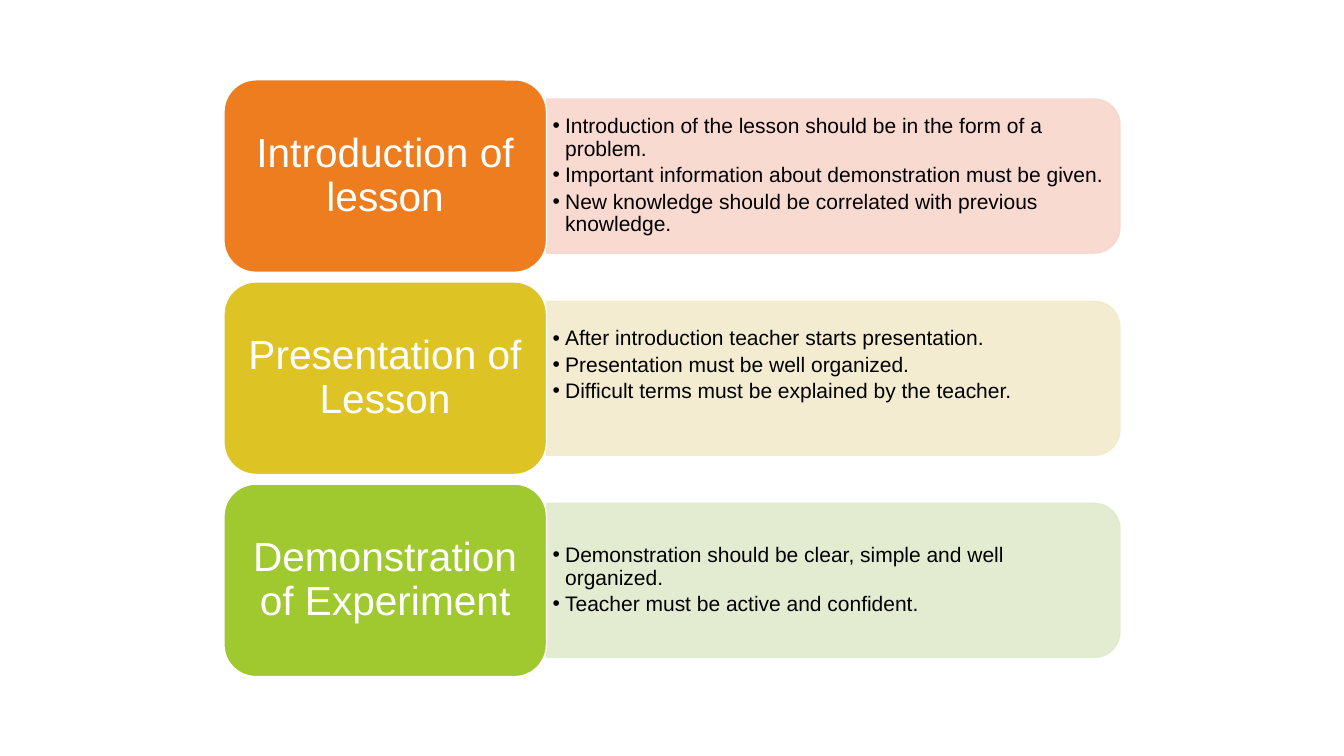
"""Build a slide of three lesson stages, each a title card with a bulleted panel."""
from lxml.etree import SubElement
from pptx import Presentation
from pptx.dml.color import RGBColor
from pptx.enum.shapes import MSO_SHAPE as SHAPE
from pptx.enum.text import MSO_ANCHOR as ANCHOR, PP_ALIGN as ALIGN
from pptx.oxml.ns import qn
from pptx.util import Pt


def paint(color_format, hex_color, alpha=100):
    color_format.rgb = RGBColor.from_string(hex_color)
    if alpha < 100:
        for clr in color_format._xFill.iter(qn("a:srgbClr")):
            SubElement(clr, qn("a:alpha"), val=str(alpha * 1000))


def add_text(p, text, size, hex_color, space_after):
    p.line_spacing = 0.9
    p.space_after = Pt(space_after)
    r = p.add_run()
    r.text = text
    r.font.size = Pt(size)
    r.font.name = "Arial"
    paint(r.font.color, hex_color)


STAGES = [
    ("Introduction of lesson", "ED7D1F", "F8D7CD", 2.2, [
        "Introduction of the lesson should be in the form of a problem.",
        "Important information about demonstration must be given.",
        "New knowledge should be correlated with previous knowledge."]),
    ("Presentation of Lesson", "DEC324", "F2EBCD", 20.4, [
        "After introduction teacher starts presentation.",
        "Presentation must be well organized.",
        "Difficult terms must be explained by the teacher."]),
    ("Demonstration of Experiment", "A0C82F", "E0EBCD", 2.2, [
        "Demonstration should be clear, simple and well organized.",
        "Teacher must be active and confident."]),
]
LEFT, TOP, PITCH = 160, 57, 144.4
CARD_W, CARD_H = 230.4, 137.5
PANEL_W, PANEL_H = 409.6, 110
TEXT_W, TEXT_H = 404, 99.4
PANEL_LEFT = LEFT + CARD_W

prs = Presentation()
prs.slide_width, prs.slide_height = Pt(960), Pt(540)
s = prs.slides.add_slide(prs.slide_layouts[6])

for i, (title, card_color, panel_color, bottom, bullets) in enumerate(STAGES):
    top = TOP + i * PITCH
    middle = top + CARD_H / 2

    panel = s.shapes.add_shape(
        SHAPE.ROUND_2_SAME_RECTANGLE,
        Pt(PANEL_LEFT + (PANEL_W - PANEL_H) / 2), Pt(middle - PANEL_W / 2),
        Pt(PANEL_H), Pt(PANEL_W))
    panel.rotation = 90
    card = s.shapes.add_shape(
        SHAPE.ROUNDED_RECTANGLE, Pt(LEFT), Pt(top), Pt(CARD_W), Pt(CARD_H))

    for sp, fill, line, alpha in ((panel, panel_color, panel_color, 90),
                                  (card, card_color, "FFFFFF", 100)):
        sp.shadow.inherit = False
        sp.fill.solid()
        sp.line.width = Pt(1)
        sp.line.fill.solid()
        for color_format, hex_color in ((sp.fill.fore_color, fill),
                                        (sp.line.fill.fore_color, line)):
            paint(color_format, hex_color, alpha)

    box = s.shapes.add_textbox(
        Pt(PANEL_LEFT), Pt(middle - TEXT_H / 2), Pt(TEXT_W), Pt(TEXT_H))
    for sp, side, upper, lower in ((card, 8.6, 4.3, 4.3), (box, 4.3, 2.2, bottom)):
        tf = sp.text_frame
        tf.word_wrap = True
        tf.vertical_anchor = ANCHOR.MIDDLE
        tf.margin_left = tf.margin_right = Pt(side)
        tf.margin_top, tf.margin_bottom = Pt(upper), Pt(lower)

    p = card.text_frame.paragraphs[0]
    p.alignment = ALIGN.CENTER
    add_text(p, title, 29, "FFFFFF", 0)

    tf = box.text_frame
    for n, bullet in enumerate(bullets):
        p = tf.add_paragraph() if n else tf.paragraphs[0]
        p.level = 1
        add_text(p, bullet, 15, "000000", 2.6)
        pPr = p._p.get_or_add_pPr()
        pPr.set("marL", str(Pt(9)))
        pPr.set("indent", str(-Pt(9)))
        SubElement(pPr, qn("a:buFont"), typeface="Arial")
        SubElement(pPr, qn("a:buChar"), char="•")

prs.save("out.pptx")
